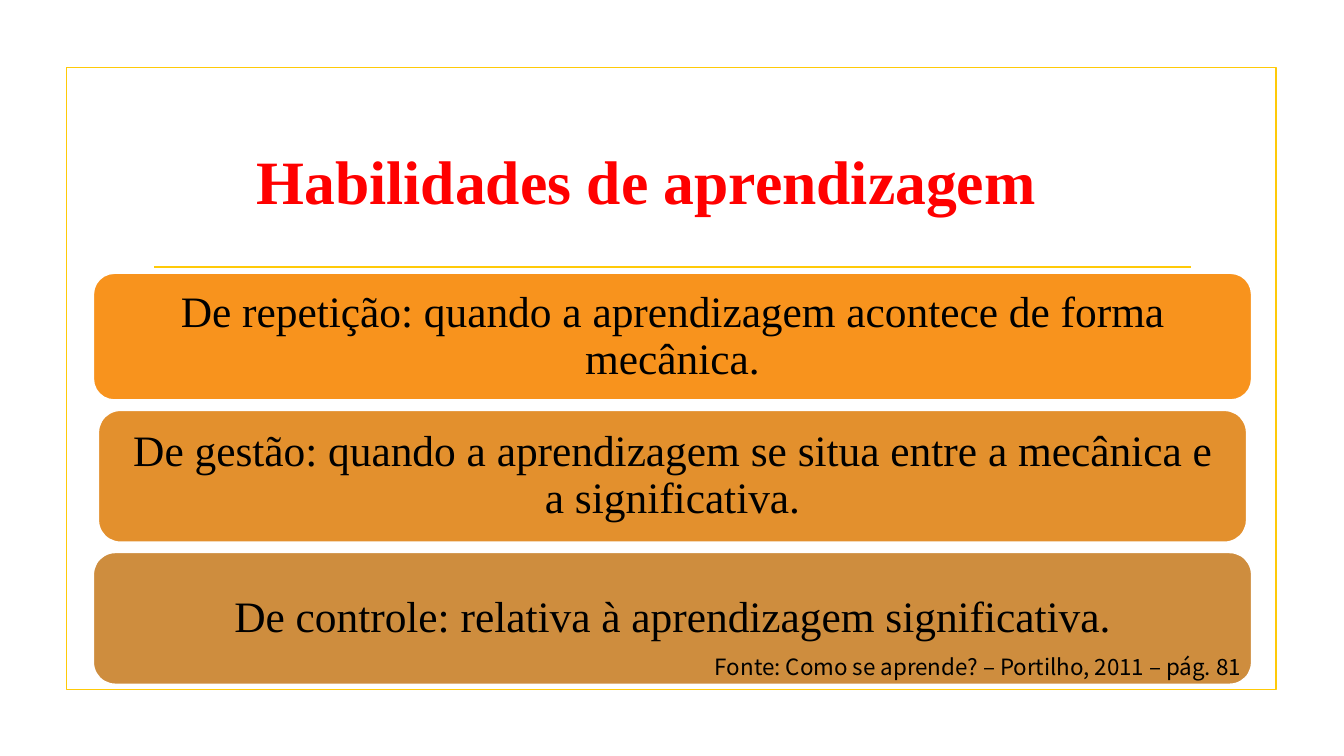
from pptx import Presentation
from pptx.dml.color import RGBColor
from pptx.enum.shapes import MSO_CONNECTOR as Connector, MSO_SHAPE as Shape
from pptx.enum.text import MSO_ANCHOR as Anchor, PP_ALIGN as Align
from pptx.oxml.ns import qn
from pptx.util import Inches, Pt
from lxml.etree import SubElement


def color(value):
    return RGBColor.from_string(value)


class SlideBuilder:
    serif = "Times New Roman"
    sans = "Noto Sans CJK JP"
    gold = "FFCA08"
    line_width = Pt(1.25)

    def __init__(self, slide):
        self.slide = slide

    def set_text(self, shape, text, font, align, margins, anchor=Anchor.MIDDLE, spacing=1.0):
        frame = shape.text_frame
        side, top = margins
        frame_format = {
            "word_wrap": True,
            "vertical_anchor": anchor,
            "margin_left": Inches(side),
            "margin_right": Inches(side),
            "margin_top": Inches(top),
            "margin_bottom": Inches(top),
        }
        for name, value in frame_format.items():
            setattr(frame, name, value)
        paragraph = frame.paragraphs[0]
        paragraph.alignment = align
        paragraph.line_spacing = spacing
        run = paragraph.add_run()
        run.text = text
        font = dict(font)
        run.font.color.rgb = color(font.pop("color", "000000"))
        for name, value in font.items():
            setattr(run.font, name, value)

    def box(self, preset, bounds, line, fill=None):
        shape = self.slide.shapes.add_shape(preset, *map(Inches, bounds))
        shape.shadow.inherit = False
        if fill:
            shape.fill.solid()
            shape.fill.fore_color.rgb = color(fill)
        else:
            shape.fill.background()
        shape.line.color.rgb = color(line)
        shape.line.width = self.line_width
        return shape

    def rule(self, left, right, top):
        connector = self.slide.shapes.add_connector(
            Connector.STRAIGHT, Inches(left), Inches(top), Inches(right), Inches(top))
        connector.line.color.rgb = color(self.gold)
        connector.line.width = self.line_width
        SubElement(connector._element.spPr, qn("a:effectLst"))

    def card(self, bounds, fill, text):
        shape = self.box(Shape.ROUNDED_RECTANGLE, bounds, "FFFFFF", fill)
        font = {"name": self.serif, "size": Pt(31)}
        self.set_text(shape, text, font, Align.CENTER, (0.18, 0.18), spacing=0.9)

    def label(self, bounds, text, font, align, anchor):
        shape = self.slide.shapes.add_textbox(*map(Inches, bounds))
        self.set_text(shape, text, font, align, (0.1, 0.05), anchor)


def main():
    presentation = Presentation()
    presentation.slide_width = Inches(13.33)
    presentation.slide_height = Inches(7.5)
    builder = SlideBuilder(presentation.slides.add_slide(presentation.slide_layouts[6]))

    builder.box(Shape.RECTANGLE, (0.66, 0.67, 12, 6.17), builder.gold)
    builder.rule(1.53, 11.81, 2.65)

    skills = [
        (11.49, 1.26, "F8931D", "De repetição: quando a aprendizagem acontece de forma mecânica."),
        (11.39, 1.31, "E3902D",
         "De gestão: quando a aprendizagem se situa entre a mecânica e a significativa."),
        (11.49, 1.31, "CE8D3E", "De controle: relativa à aprendizagem significativa."),
    ]
    center, top, gap = 6.67, 2.71, 0.1
    for width, height, fill, text in skills:
        builder.card((center - width / 2, top, width, height), fill, text)
        top += height + gap

    builder.label((6.29, 6.43, 6.12, 0.37), "Fonte: Como se aprende? – Portilho, 2011 – pág. 81",
                  {"name": builder.sans, "size": Pt(16)}, Align.RIGHT, Anchor.TOP)
    builder.label((0.92, 1.07, 10.99, 1.43), "Habilidades de aprendizagem",
                  {"name": builder.serif, "size": Pt(44), "bold": True, "color": "FF0000"},
                  Align.CENTER, Anchor.MIDDLE)

    presentation.save("out.pptx")


if __name__ == "__main__":
    main()
